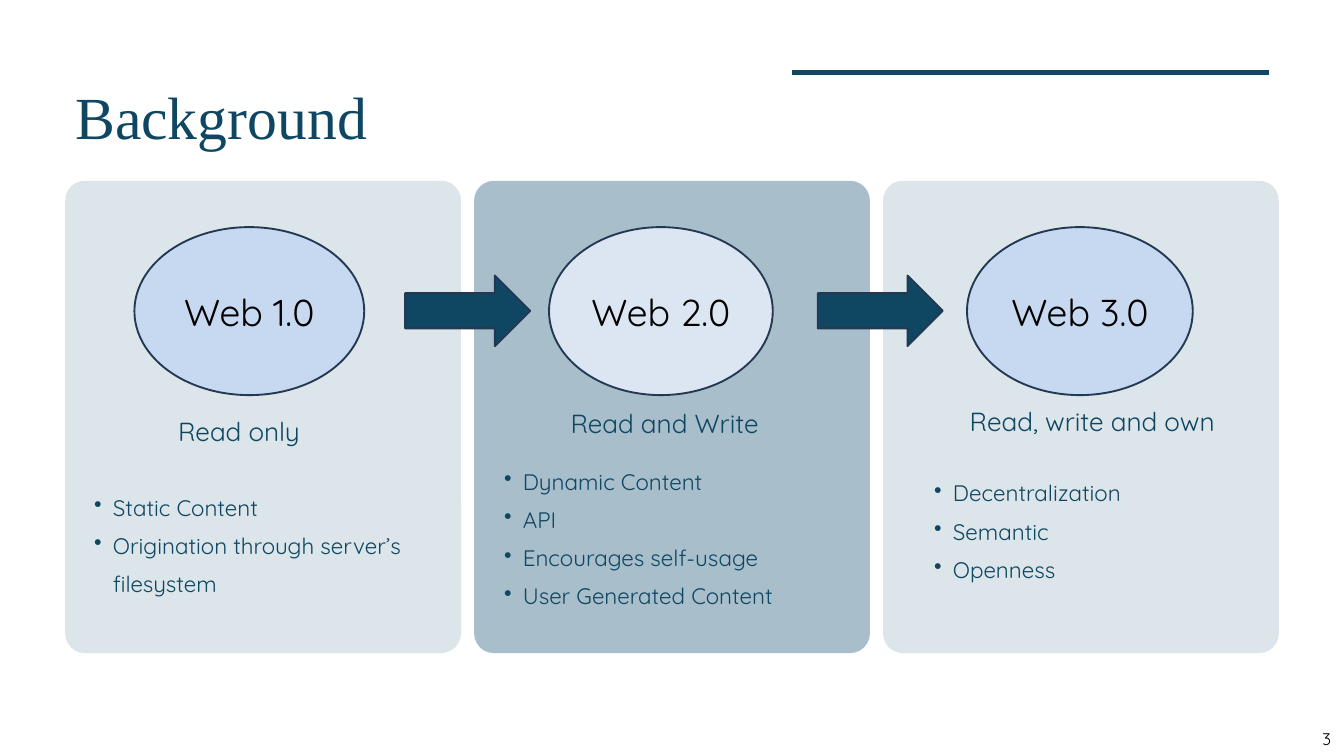
from lxml.etree import SubElement
from pptx import Presentation
from pptx.dml.color import RGBColor
from pptx.enum.shapes import MSO_CONNECTOR, MSO_SHAPE
from pptx.enum.text import MSO_ANCHOR, PP_ALIGN
from pptx.oxml.ns import qn
from pptx.util import Inches, Pt

COLORS = {
    "navy": "0F4662",
    "outline": "233953",
    "pale": "DBE5EA",
    "slate": "A9BECB",
    "sky": "C6D9F1",
    "ice": "DCE6F2",
    "black": "000000",
}
BODY_FONT = "Quicksand"
TITLE_FONT = "Times New Roman"
PANEL_LEFT, PANEL_STEP = 0.97, 6.085

ERAS = [
    {
        "panel": "pale",
        "name": "Web 1.0", "oval": (2, 3.42), "oval_fill": "sky",
        "summary": "Read only", "summary_at": (2.65, 6.1, 2.12, 0.5),
        "points": ["Static Content", "Origination through server’s filesystem"],
        "points_at": (1.11, 7.18, 5.58, 1.66),
    },
    {
        "panel": "slate",
        "name": "Web 2.0", "oval": (8.17, 3.33), "oval_fill": "ice",
        "summary": "Read and Write", "summary_at": (8.49, 5.98, 3.04, 0.5),
        "points": ["Dynamic Content", "API", "Encourages self-usage", "User Generated Content"],
        "points_at": (7.21, 6.8, 5.58, 2.24),
    },
    {
        "panel": "pale",
        "name": "Web 3.0", "oval": (14.39, 3.36), "oval_fill": "sky",
        "summary": "Read, write and own", "summary_at": (14.43, 5.96, 3.95, 0.5),
        "points": ["Decentralization", "Semantic", "Openness"],
        "points_at": (13.61, 6.97, 4.92, 1.66),
    },
]


def rgb(name):
    """Return the named colour."""
    return RGBColor.from_string(COLORS[name])


def add_bullet(para):
    """Give a paragraph a hanging bullet."""
    properties = para._p.get_or_add_pPr()
    properties.set("marL", str(Inches(0.57)))
    properties.set("indent", str(Inches(-0.28)))
    SubElement(properties, qn("a:buChar")).set("char", "•")


def write_para(para, text, size, font=BODY_FONT, color="navy", spacing=None, align=None, bullet=False):
    """Fill a paragraph with one formatted run."""
    if bullet:
        para.level = 1
        add_bullet(para)
    if spacing:
        para.line_spacing = Pt(spacing)
    if align is not None:
        para.alignment = align
    span = para.add_run()
    span.text = text
    span.font.size = Pt(size)
    span.font.name = font
    span.font.color.rgb = rgb(color)


def add_text(page, lines, at, inset=0, wrap=True, **style):
    """Add a text box with one paragraph per line."""
    box = page.shapes.add_textbox(*map(Inches, at))
    frame = box.text_frame
    frame.word_wrap = wrap
    frame.margin_left = frame.margin_right = Inches(inset)
    frame.margin_top = frame.margin_bottom = Inches(inset / 2)
    for index, line in enumerate(lines):
        para = frame.add_paragraph() if index else frame.paragraphs[0]
        write_para(para, line, **style)


def add_block(page, kind, at, fill, outline=None):
    """Add a filled preset shape with an optional outline."""
    shape = page.shapes.add_shape(kind, *map(Inches, at))
    shape.shadow.inherit = False
    shape.fill.solid()
    shape.fill.fore_color.rgb = rgb(fill)
    if outline:
        shape.line.color.rgb = rgb(outline)
        shape.line.width = Pt(2)
    else:
        shape.line.fill.background()
    return shape


def add_panel(page, left, fill):
    """Add a rounded background panel."""
    panel = add_block(page, MSO_SHAPE.ROUNDED_RECTANGLE, (left, 2.69, 5.89, 7.03), fill)
    panel.adjustments[0] = 0.05


def add_oval(page, text, left, width, fill):
    """Add an outlined ellipse with a centred name."""
    oval = add_block(page, MSO_SHAPE.OVAL, (left, 3.38, width, 2.5), fill, "outline")
    oval.text_frame.vertical_anchor = MSO_ANCHOR.MIDDLE
    write_para(oval.text_frame.paragraphs[0], text, 40, color="black", align=PP_ALIGN.CENTER)


def add_rule(page, left, right, top):
    """Add the thick horizontal rule."""
    rule = page.shapes.add_connector(
        MSO_CONNECTOR.STRAIGHT, Inches(left), Inches(top), Inches(right), Inches(top))
    rule.line.color.rgb = rgb("navy")
    rule.line.width = Pt(6)
    SubElement(rule._element.spPr, qn("a:effectLst"))


def main():
    """Build and save the slide."""
    deck = Presentation()
    deck.slide_width, deck.slide_height = Inches(20), Inches(11.25)
    page = deck.slides.add_slide(deck.slide_layouts[6])
    for index, era in enumerate(ERAS):
        add_panel(page, PANEL_LEFT + index * PANEL_STEP, era["panel"])
    add_text(page, ["Background"], (1.12, 1.01, 8.88, 1.2), size=64, font=TITLE_FONT, spacing=89.6)
    add_rule(page, 11.78, 18.88, 1.08)
    for era in ERAS:
        add_text(page, era["points"], era["points_at"], size=24, spacing=40.8, bullet=True)
        add_text(page, [era["summary"]], era["summary_at"], size=28, spacing=39.2)
        add_oval(page, era["name"], *era["oval"], era["oval_fill"])
    add_text(page, ["3"], (19.58, 10.79, 0.33, 0.4), inset=0.1, wrap=False, size=18, color="black")
    for left in (6.03, 12.17):
        add_block(page, MSO_SHAPE.RIGHT_ARROW, (left, 4.1, 1.86, 1.05), "navy", "outline")
    deck.save("out.pptx")


if __name__ == "__main__":
    main()
